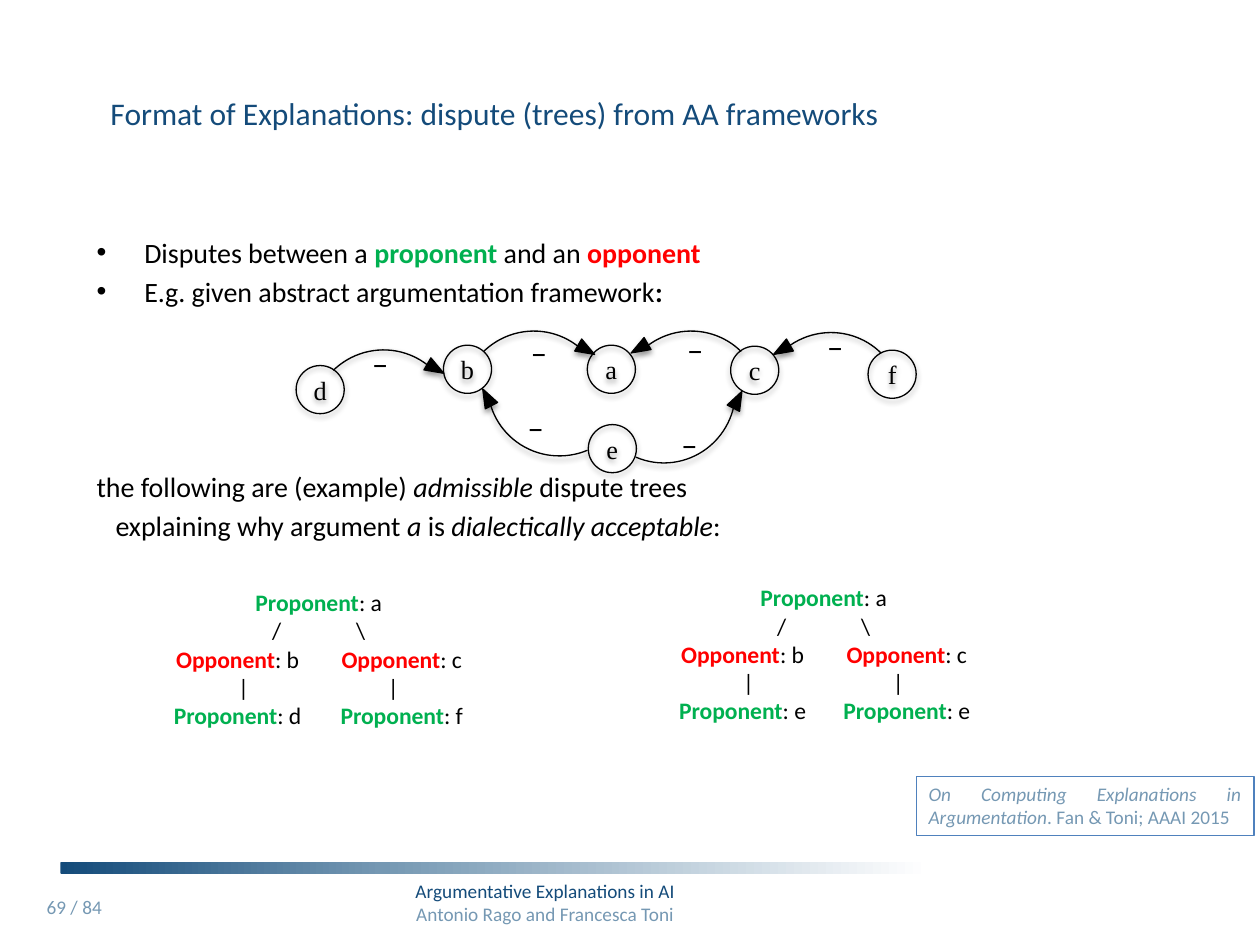
from copy import deepcopy
from dataclasses import dataclass

from lxml.etree import SubElement
from pptx import Presentation
from pptx.dml.color import RGBColor
from pptx.enum.shapes import MSO_SHAPE
from pptx.enum.text import MSO_ANCHOR, PP_ALIGN
from pptx.oxml.ns import qn
from pptx.util import Cm, Pt


@dataclass(frozen=True)
class Theme:
    black: str = "000000"
    white: str = "FFFFFF"
    navy: str = "144B7A"
    steel: str = "7598B3"
    frame: str = "4F81BD"
    green: str = "00B050"
    red: str = "FF0000"
    font: str = "Calibri"
    node_font: str = "Times New Roman"
    title: float = 18
    body: float = 16
    node: float = 15
    tree: float = 13.5
    small: float = 11


theme = Theme()


def add_text(text_frame, lines, size, alignment=PP_ALIGN.LEFT, font=theme.font):
    """Fill a frame with lines of (text, colour, style) pieces; style is "", "b" or "i"."""
    text_frame.word_wrap = True
    for index, pieces in enumerate(lines):
        paragraph = text_frame.paragraphs[0] if index == 0 else text_frame.add_paragraph()
        paragraph.alignment = alignment
        for text, colour, style in pieces:
            run = paragraph.add_run()
            run.text = text
            run.font.name = font
            run.font.size = Pt(size)
            run.font.color.rgb = RGBColor.from_string(colour)
            run.font.bold = style == "b"
            run.font.italic = style == "i"


def add_shadowed_shape(shapes, kind, left, top, width, height, rotation=0, filled=True):
    shape = shapes.add_shape(kind, Cm(left), Cm(top), Cm(width), Cm(height))
    shape.rotation = rotation
    if filled:
        shape.fill.solid()
        shape.fill.fore_color.rgb = RGBColor.from_string(theme.black)
    else:
        shape.fill.background()
    shape.line.color.rgb = RGBColor.from_string(theme.black)
    shape.line.width = Pt(0.75)
    shape.shadow.inherit = False
    effects = shape._element.spPr.find(qn("a:effectLst"))
    shadow = SubElement(effects, qn("a:outerShdw"), blurRad=str(Pt(3.1)),
                        dist=str(Pt(1.8)), dir="5400000", rotWithShape="0")
    colour = SubElement(shadow, qn("a:srgbClr"), val=theme.black)
    SubElement(colour, qn("a:alpha"), val="35000")
    return shape


presentation = Presentation()
presentation.slide_width = Cm(25.4)
presentation.slide_height = Cm(19.05)
slide = presentation.slides.add_slide(presentation.slide_layouts[6])
shapes = slide.shapes

# Footer
bar = shapes.add_shape(MSO_SHAPE.ROUNDED_RECTANGLE, Cm(1.22), Cm(17.37), Cm(17.5), Cm(0.25))
bar.adjustments[0] = 0.1
bar.shadow.inherit = False
bar.line.fill.background()
bar.fill.gradient()
bar.fill.gradient_angle = 0
first_stop = bar._element.spPr.find(".//" + qn("a:gs"))
first_stop.addnext(deepcopy(first_stop))
for stop, (position, colour) in zip(
        bar.fill.gradient_stops, [(0, theme.navy), (0.37, theme.steel), (1, theme.white)]):
    stop.position = position
    stop.color.rgb = RGBColor.from_string(colour)

footer = shapes.add_textbox(Cm(2.95), Cm(17.6), Cm(16.08), Cm(1.19))
add_text(footer.text_frame, [
    [("Argumentative Explanations in AI", theme.navy, "")],
    [("Antonio Rago and Francesca Toni", theme.steel, "")],
], theme.small, PP_ALIGN.CENTER)

page_number = shapes.add_textbox(Cm(0.69), Cm(17.93), Cm(1.7), Cm(1.02))
add_text(page_number.text_frame, [[("69 / 84", theme.steel, "")]], theme.small)

# Title and body
title = shapes.add_textbox(Cm(1.7), Cm(1.47), Cm(16.54), Cm(1.63))
title.text_frame.vertical_anchor = MSO_ANCHOR.MIDDLE
add_text(title.text_frame, [
    [("Format of Explanations: dispute (trees) from AA frameworks", theme.navy, "")],
], theme.title, PP_ALIGN.CENTER)

body = shapes.add_textbox(Cm(1.7), Cm(4.62), Cm(21.89), Cm(11.35))
add_text(body.text_frame, [
    [("Disputes between a ", theme.black, ""), ("proponent", theme.green, "b"),
     (" and an ", theme.black, ""), ("opponent", theme.red, "b")],
    [("E.g. given abstract argumentation framework", theme.black, ""), (":", theme.black, "b")],
    [("the following are (example) ", theme.black, ""), ("admissible", theme.black, "i"),
     (" dispute trees", theme.black, "")],
    [("explaining why argument ", theme.black, ""), ("a ", theme.black, "i"),
     ("is ", theme.black, ""), ("dialectically acceptable", theme.black, "i"),
     (":", theme.black, "")],
], theme.body)
first, second, third, fourth = body.text_frame.paragraphs
for paragraph in (first, second):
    properties = paragraph._p.get_or_add_pPr()
    properties.set("marL", str(Cm(0.96)))
    properties.set("indent", str(Cm(-0.96)))
    SubElement(properties, qn("a:buFont"), typeface="Arial")
    SubElement(properties, qn("a:buChar"), char="•")
fourth._p.get_or_add_pPr().set("marL", str(Cm(0.38)))
for paragraph, space in ((second, 3), (third, 92.5), (fourth, 3)):
    paragraph.space_before = Pt(space)

# Argumentation framework: arc (left, top, turn, start, end), head (left, top, turn), sign (left, top)
attacks = [
    ((6.27, 7.06, 318.2, 160.86, 213.77), (8.64, 7.24, 120), (7.26, 6.83)),
    ((9.3, 6.68, 318.2, 160.86, 213.77), (11.68, 6.86, 120), (10.46, 6.6)),
    ((12.47, 6.68, 318.2, 160.86, 213.77), (12.75, 6.83, 240), (13.61, 6.55)),
    ((15.29, 6.71, 318.2, 160.86, 213.77), (15.62, 6.86, 240), (16.43, 6.48)),
    ((9.83, 6.32, 171.4, 153.52, 213.77), (9.68, 7.82, 332.4), (10.39, 8.13)),
    ((11.94, 6.45, 105.6, 160.86, 4.46), (14.73, 7.87, 27), (13.49, 8.46)),
]
arguments = {"a": (11.84, 6.96), "b": (8.94, 6.96), "c": (14.73, 6.98),
             "d": (5.97, 7.37), "e": (11.86, 8.56), "f": (17.5, 7.06)}

framework = shapes.add_group_shape().shapes
for (left, top, turn, start, end), (head_left, head_top, head_turn), sign_place in attacks:
    arc = add_shadowed_shape(framework, MSO_SHAPE.BLOCK_ARC, left, top, 2.9, 2.87, turn)
    for index, value in enumerate((start, end, 0)):
        arc.adjustments[index] = value
    add_shadowed_shape(framework, MSO_SHAPE.ISOSCELES_TRIANGLE,
                       head_left, head_top, 0.28, 0.38, head_turn)
    sign = framework.add_textbox(*map(Cm, sign_place), Cm(0.71), Cm(1.02))
    add_text(sign.text_frame, [[("−", theme.black, "")]], theme.title)

for name, (left, top) in arguments.items():
    node = add_shadowed_shape(framework, MSO_SHAPE.OVAL, left, top, 0.97, 0.97, filled=False)
    frame = node.text_frame
    add_text(frame, [[(name, theme.black, "")]], theme.node, PP_ALIGN.CENTER, theme.node_font)
    frame.word_wrap = False
    frame.vertical_anchor = MSO_ANCHOR.MIDDLE
    frame.margin_left = frame.margin_right = frame.margin_top = frame.margin_bottom = 0

# Dispute trees: the two branches sit on centred tab stops
branch_stops = [(), (2.33, 4.02), (1.54, 4.85), (1.66, 4.68), (1.54, 4.85)]
proponent = ("Proponent", theme.green, "b")
opponent = ("Opponent", theme.red, "b")
tab = ("\t", theme.black, "")
for left, top, left_leaf, right_leaf in ((3.25, 11.73, "d", "f"), (13.43, 11.63, "e", "e")):
    tree = shapes.add_textbox(Cm(left), Cm(top), Cm(6.35), Cm(3.15))
    tree.text_frame.margin_left = tree.text_frame.margin_right = 0
    add_text(tree.text_frame, [
        [proponent, (": a", theme.black, "")],
        [("\t/\t\\", theme.black, "")],
        [tab, opponent, (": b\t", theme.black, ""), opponent, (": c", theme.black, "")],
        [("\t|\t|", theme.black, "")],
        [tab, proponent, (f": {left_leaf}\t", theme.black, ""),
         proponent, (f": {right_leaf}", theme.black, "")],
    ], theme.tree)
    tree.text_frame.paragraphs[0].alignment = PP_ALIGN.CENTER
    for paragraph, stops in zip(tree.text_frame.paragraphs[1:], branch_stops[1:]):
        tab_list = SubElement(paragraph._p.get_or_add_pPr(), qn("a:tabLst"))
        for position in stops:
            SubElement(tab_list, qn("a:tab"), pos=str(Cm(position)), algn="ctr")

# Reference
reference = shapes.add_textbox(Cm(18.47), Cm(15.65), Cm(6.81), Cm(1.19))
reference.line.color.rgb = RGBColor.from_string(theme.frame)
reference.line.width = Pt(0.75)
add_text(reference.text_frame, [
    [("On Computing Explanations in Argumentation", theme.steel, "i"),
     (". Fan & Toni; AAAI 2015", theme.steel, "")],
], theme.small, PP_ALIGN.JUSTIFY)

presentation.save("out.pptx")
